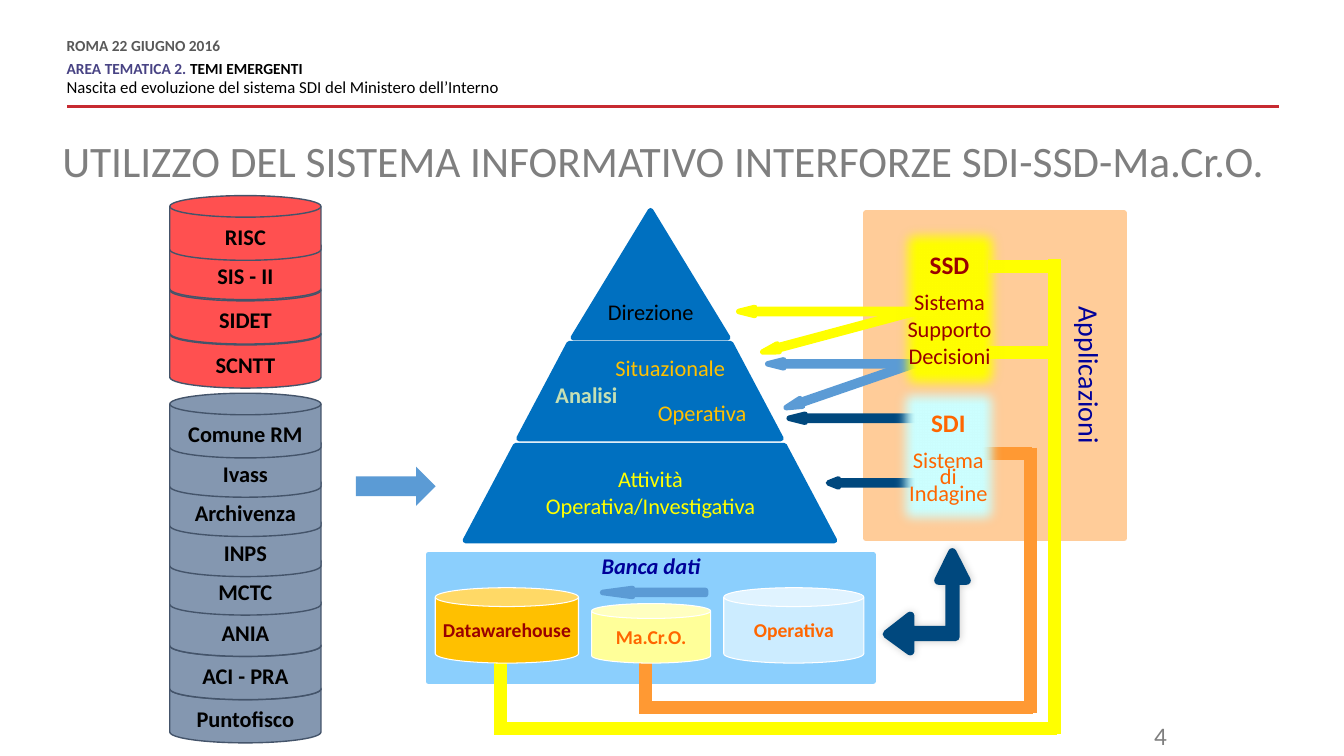
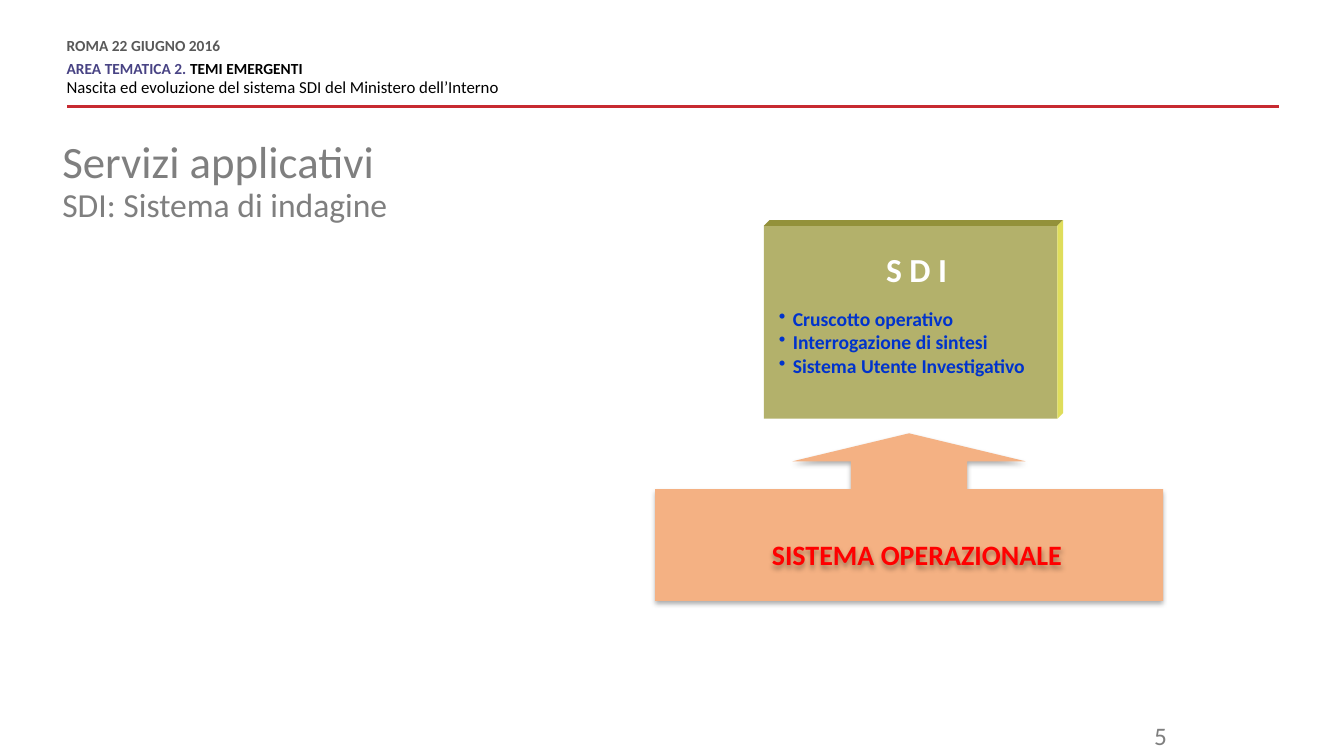
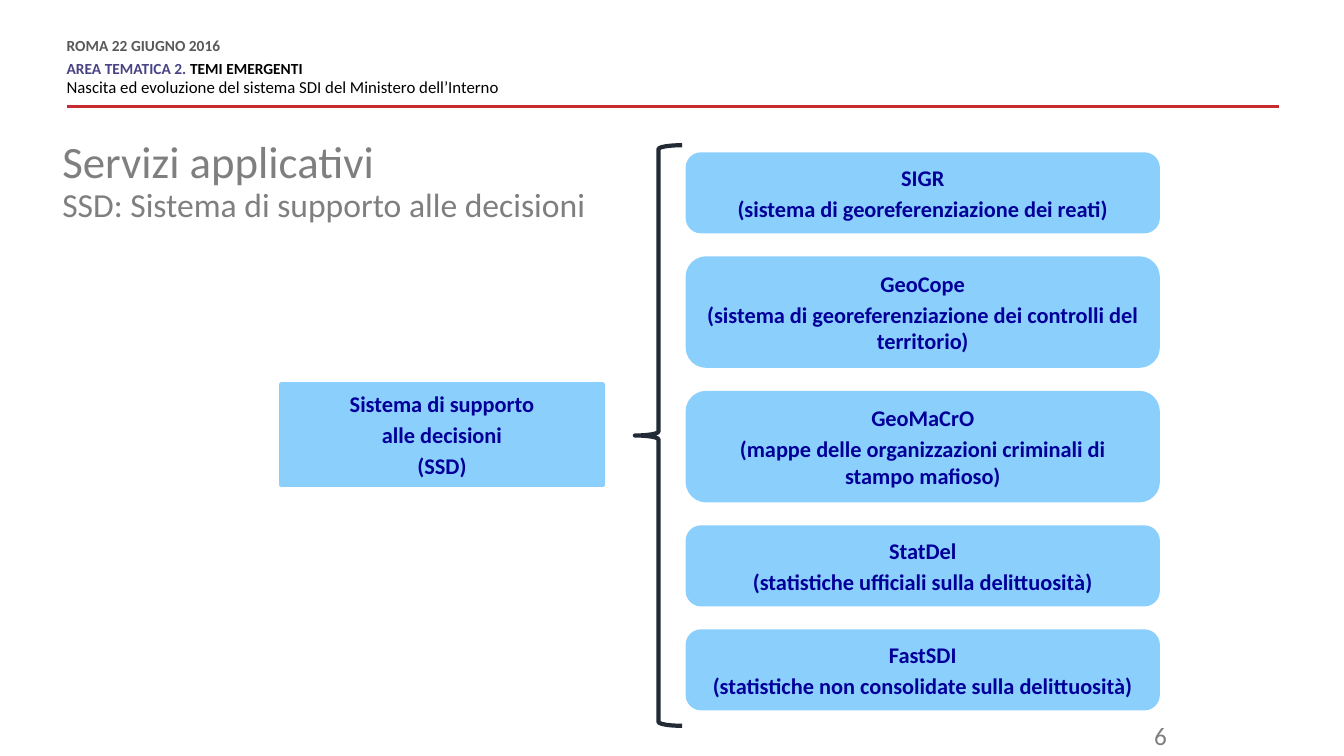
from lxml.etree import SubElement
from pptx import Presentation
from pptx.dml.color import RGBColor
from pptx.enum.shapes import MSO_CONNECTOR, MSO_SHAPE
from pptx.enum.text import MSO_ANCHOR, MSO_AUTO_SIZE, PP_ALIGN
from pptx.oxml.ns import qn
from pptx.util import Cm, Pt

FONT = "Calibri"
GREY, NAVY, SKY, BLUE = "7F7F7F", "000099", "8BCFFD", "0070C0"
YELLOW, ORANGE, AZURE, DEEP = "FFFF00", "FF9933", "5B9BD5", "00487E"
RUST, WINE, GOLD, WHITE = "FF6600", "990000", "FFC000", "FFFFFF"
LEFT, MID, RIGHT = PP_ALIGN.LEFT, PP_ALIGN.CENTER, PP_ALIGN.RIGHT


def tint(code):
    return RGBColor.from_string(code)


def write(frame, text, size=16, color="000000", bold=False, italic=False,
          align=MID, before=0, after=0, line=None, bullet=None, new=True):
    par = frame.paragraphs[-1]
    if new:
        if par.runs:
            par = frame.add_paragraph()
        par.alignment = align
        par.space_before, par.space_after = Pt(before), Pt(after)
        if line:
            par.line_spacing = line
        if bullet:
            props = par._p.get_or_add_pPr()
            props.set("marL", str(Cm(0.35)))
            props.set("indent", str(-Cm(0.35)))
            SubElement(props, qn("a:buChar")).set("char", bullet)
    run = par.add_run()
    run.text = text
    font = run.font
    font.name, font.size = FONT, Pt(size)
    font.bold, font.italic = bold, italic
    font.color.rgb = tint(color)


class Deck:
    def __init__(self):
        self.show = Presentation()
        self.show.slide_width, self.show.slide_height = Cm(33.87), Cm(19.05)
        self.slide = None

    def page(self, number, width, *lines):
        self.slide = self.show.slides.add_slide(self.show.slide_layouts[5])
        self.line(32.23, 2.69, 1.68, 2.69, "C72A31", 2)
        head = self.area(1.68, 0.99, 21.18, 1.5, MSO_ANCHOR.TOP)
        style = dict(size=11, bold=True, align=LEFT, line=Pt(10.8))
        write(head, "ROMA 22 GIUGNO 2016", color="595959", after=6, **style)
        write(head, "AREA TEMATICA 2. ", color="484384", **style)
        write(head, "TEMI EMERGENTI", size=11, bold=True, new=False)
        write(head, "Nascita ed evoluzione del sistema SDI del Ministero dell’Interno",
              size=12, align=LEFT, before=3, line=Pt(10.8))
        title = self.slide.shapes.title
        title.left, title.top = Cm(1.57), Cm(3.53)
        title.width, title.height = Cm(width), Cm(2.6)
        frame = self.fit(title, 0, MSO_ANCHOR.TOP)
        for text, size in lines:
            write(frame, text, size=size, color=GREY, align=LEFT, line=0.9)
        self.label(number, 27, 18.09, 2.41, 0.9, size=18, color=GREY, align=RIGHT)

    def fit(self, shape, inset=0.25, anchor=MSO_ANCHOR.MIDDLE):
        frame = shape.text_frame
        frame.word_wrap = True
        frame.auto_size = MSO_AUTO_SIZE.NONE
        frame.vertical_anchor = anchor
        frame.margin_left = frame.margin_right = Cm(inset)
        frame.margin_top = frame.margin_bottom = Cm(inset / 2)
        return frame

    def area(self, x, y, w, h, anchor=MSO_ANCHOR.MIDDLE, turn=0):
        shape = self.slide.shapes.add_textbox(Cm(x), Cm(y), Cm(w), Cm(h))
        shape.rotation = turn
        return self.fit(shape, 0, anchor)

    def label(self, text, x, y, w, h=0.94, turn=0, **style):
        write(self.area(x, y, w, h, turn=turn), text, **style)

    def paint(self, shape, fill, edge, width):
        shape.shadow.inherit = False
        if fill:
            shape.fill.solid()
            shape.fill.fore_color.rgb = tint(fill)
        else:
            shape.fill.background()
        if edge:
            shape.line.color.rgb = tint(edge)
            shape.line.width = Pt(width)
        else:
            shape.line.fill.background()
        return shape

    def box(self, kind, x, y, w, h, fill, edge=None, width=4, adj=(), turn=0):
        shape = self.slide.shapes.add_shape(kind, Cm(x), Cm(y), Cm(w), Cm(h))
        for spot, value in enumerate(adj):
            shape.adjustments[spot] = value
        shape.rotation = turn
        return self.paint(shape, fill, edge, width)

    def form(self, points, fill, edge=None, width=1):
        dots = [(Cm(x), Cm(y)) for x, y in points]
        pen = self.slide.shapes.build_freeform(*dots[0])
        pen.add_line_segments(dots[1:], close=True)
        return self.paint(pen.convert_to_shape(), fill, edge, width)

    def line(self, x1, y1, x2, y2, color, width):
        wire = self.slide.shapes.add_connector(
            MSO_CONNECTOR.STRAIGHT, Cm(x1), Cm(y1), Cm(x2), Cm(y2))
        wire.line.color.rgb = tint(color)
        wire.line.width = Pt(width)
        SubElement(wire.element.spPr, qn("a:effectLst"))

    def arrow(self, x, y, w, color, head=2, turn=0):
        self.box(MSO_SHAPE.LEFT_ARROW, x, y, w, 0.2, color, color,
                 adj=(0.5, head), turn=turn)

    def disk(self, text, y, fill):
        shape = self.box(MSO_SHAPE.FLOWCHART_MAGNETIC_DISK, 4.28, y, 3.81, 1.63,
                         fill, "44546A", 1)
        frame = self.fit(shape, 0.1)
        frame.margin_top = Cm(0.2)
        write(frame, text, bold=True)

    def can(self, text, x, y, w, h, fill, color):
        shape = self.box(MSO_SHAPE.CAN, x, y, w, h, fill, WHITE, 0.75, (0.25,))
        write(self.fit(shape, 0.1), text, size=14, color=color, bold=True)

    def soften(self, shape):
        group = shape.element.spPr.find(qn("a:effectLst"))
        SubElement(group, qn("a:softEdge")).set("rad", str(Pt(10)))

    def shade(self, shape, alpha, blur, gap, angle):
        group = shape.element.spPr.find(qn("a:effectLst"))
        cast = SubElement(group, qn("a:outerShdw"), blurRad=str(Pt(blur)),
                          dist=str(Pt(gap)), dir=str(angle * 60000),
                          algn="ctr", rotWithShape="0")
        color = SubElement(cast, qn("a:srgbClr"), val="000000")
        SubElement(color, qn("a:alpha"), val=str(alpha * 1000))


def usage(deck):
    deck.page("4", 30.76, ("UTILIZZO DEL SISTEMA INFORMATIVO INTERFORZE SDI-SSD-Ma.Cr.O.", 31))
    rect = MSO_SHAPE.RECTANGLE
    deck.box(rect, 10.8, 13.97, 11.2, 3.2, SKY, SKY)
    deck.can("Operativa", 18.24, 14.81, 3.53, 1.9, "CCECFF", RUST)
    deck.label("Banca dati", 14.88, 13.77, 3.05, color=NAVY, bold=True, italic=True)
    deck.box(rect, 21.83, 5.37, 6.5, 8.2, "FFCC99", "FFCC99")

    for ends in ((26.67, 8.89, 24.89, 8.89), (12.47, 18.36, 26.64, 18.36),
                 (26.58, 6.53, 26.58, 18.49), (26.7, 6.71, 24.89, 6.71),
                 (12.62, 16.41, 12.62, 18.52)):
        deck.line(*ends, YELLOW, 9.5)
    deck.label("Applicazioni", 23.98, 8.94, 6.86, 1.02, turn=90, size=20, color=NAVY, line=0.9)
    deck.arrow(19.89, 10.44, 3.51, DEEP)
    deck.arrow(20.88, 12.07, 2.31, DEEP, head=1.25)

    deck.box(MSO_SHAPE.ISOSCELES_TRIANGLE, 14.45, 5.31, 3.89, 3.2, BLUE, BLUE)
    for x, y, w in ((11.73, 11.23, 9.3), (13.08, 8.66, 6.6)):
        deck.box(MSO_SHAPE.TRAPEZOID, x, y, w, 2.39, BLUE, BLUE, adj=(0.53,))
    deck.label("Direzione", 15.04, 7.37, 2.72)
    base = deck.area(13.26, 11.58, 6.27, 1.63)
    for text in ("Attività", "Operativa/Investigativa"):
        write(base, text, color=YELLOW)
    deck.label("Analisi", 13.74, 9.47, 2.08, color="C5E0B4", bold=True)
    deck.label("Operativa", 16.31, 9.93, 2.77, color=GOLD)
    deck.label("Situazionale", 15.24, 8.79, 3.3, color=GOLD)

    fork = deck.form(((24, 13.92), (23.65, 14.63), (23.93, 14.63), (23.93, 15.88),
                      (22.94, 15.88), (22.94, 15.52), (22.35, 15.98), (22.94, 16.41),
                      (22.94, 16.05), (24.08, 16.05), (24.08, 14.63), (24.36, 14.63)),
                     DEEP, DEEP, 6)
    deck.shade(fork, 20, 6, 0, 315)
    for ends in ((26.01, 11.43, 24.36, 11.43), (16.26, 16.41, 16.26, 17.91),
                 (16.1, 17.83, 26.04, 17.83), (25.97, 11.28, 25.97, 17.96)):
        deck.line(*ends, ORANGE, 9.5)
    deck.can("Datawarehouse", 10.97, 14.81, 3.61, 1.9, GOLD, WINE)
    deck.can("Ma.Cr.O.", 14.91, 15.21, 3, 1.5, "FFFF99", RUST)
    deck.arrow(15.19, 14.83, 2.59, AZURE, head=3.75)
    deck.box(MSO_SHAPE.RIGHT_ARROW, 8.97, 11.76, 2.01, 0.99, AZURE)

    for fill, disks in (
            ("8497B0", (("Puntofisco", 17.09), ("ACI - PRA", 16), ("ANIA", 14.91),
                        ("MCTC", 13.87), ("INPS", 12.9), ("Archivenza", 11.89),
                        ("Ivass", 10.9), ("Comune RM", 9.91))),
            ("FF5050", (("SCNTT", 8.15), ("SIDET", 7.04), ("SIS - II", 5.92),
                        ("RISC", 4.93)))):
        for text, y in disks:
            deck.disk(text, y, fill)

    deck.arrow(19.71, 9.55, 3.81, AZURE, turn=341)
    query = deck.box(rect, 22.4, 9.55, 3, 3.91, "CCFFFF", WHITE, 0.75)
    frame = deck.fit(query)
    write(frame, "SDI", size=18, color=RUST, bold=True)
    write(frame, "Sistema", color=RUST, before=6)
    write(frame, "di Indagine", color=RUST, line=Pt(12))
    deck.arrow(19.35, 9.07, 3.81, AZURE)
    deck.arrow(19.15, 8.2, 4.39, YELLOW, turn=345)
    deck.arrow(18.62, 7.75, 4.9, YELLOW)
    support = deck.box(rect, 22.43, 5.51, 3, 4.57, YELLOW)
    frame = deck.fit(support, 0.15)
    write(frame, "SSD", size=18, color=WINE, bold=True)
    write(frame, "Sistema Supporto Decisioni", color=WINE, before=6)
    for shape in (query, support):
        deck.soften(shape)


def inquiry(deck):
    deck.page("5", 8.81, ("Servizi applicativi", 32), ("SDI: Sistema di indagine", 24))
    x, y, w, h, deep = 19.25, 5.69, 7.4, 4.86, 0.14
    deck.box(MSO_SHAPE.RECTANGLE, x, y, w, h, "B3B16B")
    deck.form(((x, y), (x + deep, y - deep), (x + w + deep, y - deep), (x + w, y)), "93913A")
    deck.form(((x + w, y), (x + w + deep, y - deep),
               (x + w + deep, y + h - deep), (x + w, y + h)), "DFDD5B")
    items = deck.area(19.63, 7.65, 6.9, 1.94)
    for text in ("Cruscotto operativo", "Interrogazione di sintesi",
                 "Sistema Utente Investigativo"):
        write(items, text, size=14, color="0033CC", bold=True, align=LEFT, bullet="•")
    deck.label("S D I", 21.87, 6.15, 2.46, 1.27, size=24, color=WHITE, bold=True)
    call = deck.box(MSO_SHAPE.UP_ARROW_CALLOUT, 16.51, 10.92, 12.8, 4.22, "F4B183",
                    adj=(0.695, 0.695, 0.167, 0.667))
    deck.shade(call, 32, 3.5, 2.2, 90)
    deck.label("SISTEMA OPERAZIONALE", 18.19, 13.42, 9.84, 1.12, size=20,
               color="FF0000", bold=True)
    name = deck.slide.shapes[-1]
    name.shadow.inherit = False
    deck.shade(name, 32, 3.5, 2.2, 90)


def support(deck):
    deck.page("6", 13.64, ("Servizi applicativi", 32),
              ("SSD: Sistema di supporto alle decisioni", 24))
    root = deck.box(MSO_SHAPE.RECTANGLE, 7.09, 9.7, 8.1, 2.51, SKY, SKY)
    frame = deck.fit(root)
    for spot, text in enumerate(("Sistema di supporto", "alle decisioni", "(SSD)")):
        write(frame, text, color=NAVY, bold=True, before=3 if spot else 0)
    top, gap = 3.91, 0.72
    for name, text, high in (
            ("SIGR", "(sistema di georeferenziazione dei reati)", 1.9),
            ("GeoCope", "(sistema di georeferenziazione dei controlli del territorio)", 2.67),
            ("GeoMaCrO", "(mappe delle organizzazioni criminali di stampo mafioso)", 2.67),
            ("StatDel", "(statistiche ufficiali sulla delittuosità)", 1.9),
            ("FastSDI", "(statistiche non consolidate sulla delittuosità)", 1.9)):
        shape = deck.box(MSO_SHAPE.ROUNDED_RECTANGLE, 17.35, top, 11.81, high, SKY, SKY)
        frame = deck.fit(shape)
        write(frame, name, color=NAVY, bold=True)
        write(frame, text, color=NAVY, bold=True, before=3)
        top += high + gap
    deck.box(MSO_SHAPE.LEFT_BRACE, 16, 3.66, 1.19, 14.63, None, "222A35", 3)


def main():
    deck = Deck()
    usage(deck)
    inquiry(deck)
    support(deck)
    deck.show.save("out.pptx")


if __name__ == "__main__":
    main()
